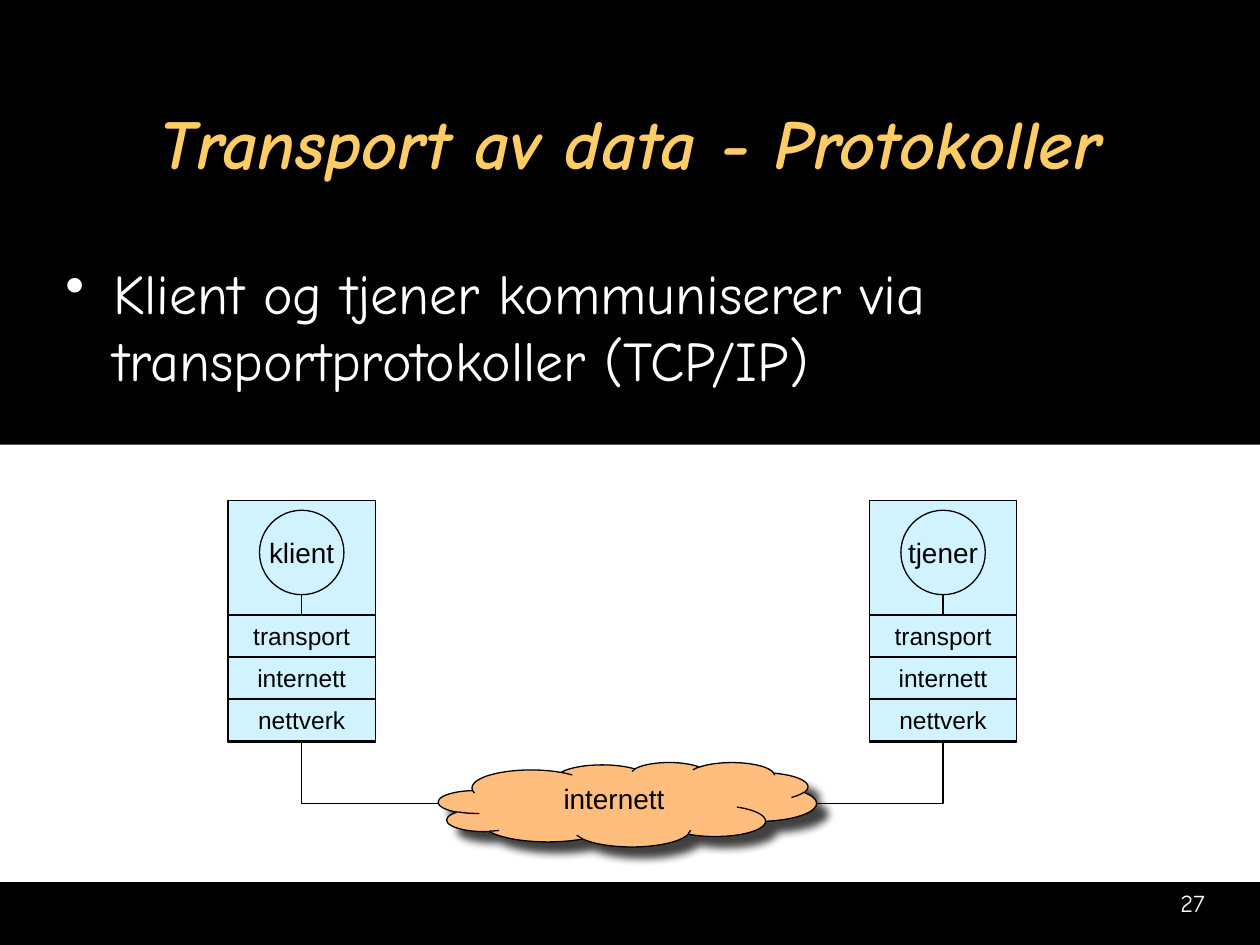
from lxml import etree
from pptx import Presentation
from pptx.dml.color import RGBColor
from pptx.enum.shapes import MSO_CONNECTOR, MSO_SHAPE
from pptx.enum.text import MSO_ANCHOR, PP_ALIGN
from pptx.oxml import parse_xml
from pptx.oxml.ns import nsdecls, qn
from pptx.util import Inches, Pt

BLACK = RGBColor(0x00, 0x00, 0x00)
WHITE = RGBColor(0xFF, 0xFF, 0xFF)
GOLD = RGBColor(0xFF, 0xCC, 0x66)
PALE_BLUE = RGBColor(0xD1, 0xF3, 0xFF)
ORANGE = RGBColor(0xFF, 0xBE, 0x7D)
RECTANGLE, OVAL, CLOUD = MSO_SHAPE.RECTANGLE, MSO_SHAPE.OVAL, MSO_SHAPE.CLOUD
STRAIGHT, ELBOW = MSO_CONNECTOR.STRAIGHT, MSO_CONNECTOR.ELBOW
TOP, MIDDLE = MSO_ANCHOR.TOP, MSO_ANCHOR.MIDDLE
LEFT, CENTER, RIGHT = PP_ALIGN.LEFT, PP_ALIGN.CENTER, PP_ALIGN.RIGHT
LINE_WIDTH = Pt(0.75)

deck = Presentation()
deck.slide_width, deck.slide_height = Inches(10), Inches(7.5)
page = deck.slides.add_slide(deck.slide_layouts[6])
page.background.fill.solid()
page.background.fill.fore_color.rgb = BLACK


def write(box, text, color, align, anchor, wrap, **formats):
    frame = box.text_frame
    frame.word_wrap = wrap
    frame.vertical_anchor = anchor
    para = frame.paragraphs[0]
    para.alignment = align
    span = para.add_run()
    span.text = text
    for name, value in formats.items():
        setattr(span.font, name, value)
    span.font.color.rgb = color
    return para


def add_filled(kind, left, top, width, height, color, outlined=True):
    shape = page.shapes.add_shape(
        kind, Inches(left), Inches(top), Inches(width), Inches(height))
    shape.shadow.inherit = False
    shape.fill.solid()
    shape.fill.fore_color.rgb = color
    if outlined:
        shape.line.color.rgb = BLACK
        shape.line.width = LINE_WIDTH
    else:
        shape.line.fill.background()
    return shape


number = page.shapes.add_textbox(Inches(7.58), Inches(7), Inches(2.08), Inches(0.33))
write(number, "27", WHITE, RIGHT, TOP, True, name="Comic Neue", size=Pt(14))

title = page.shapes.add_textbox(Inches(0.42), Inches(0.5), Inches(9.17), Inches(1.25))
write(title, "Transport av data - Protokoller", GOLD, CENTER, MIDDLE, True,
      name="Comic Neue", size=Pt(40), bold=True, italic=True)

body = page.shapes.add_textbox(Inches(0.42), Inches(2), Inches(9.17), Inches(1.33))
bullet = write(body, "Klient og tjener kommuniserer via transportprotokoller (TCP/IP)",
               WHITE, LEFT, TOP, True, name="Comic Neue", size=Pt(32))
bullet.space_before = Pt(6.4)
properties = bullet._p.get_or_add_pPr()
properties.set("marL", str(Inches(0.38)))
properties.set("indent", str(-Inches(0.38)))
etree.SubElement(properties, qn("a:buChar")).set("char", "•")

add_filled(RECTANGLE, 0, 3.53, 10, 3.47, WHITE, outlined=False)

MACHINE_WIDTH, CIRCLE_SIZE = 1.17, 0.67
LAYERS_TOP, LAYER_HEIGHT = 4.88, 1 / 3
NETWORK_Y, MACHINE_BOTTOM = 6.38, 5.88
links = []

for role, left, cloud_edge in (("klient", 1.81, 3.49), ("tjener", 6.9, 6.48)):
    middle = left + MACHINE_WIDTH / 2
    add_filled(RECTANGLE, left, 3.97, MACHINE_WIDTH, 1.92, PALE_BLUE)
    circle = add_filled(OVAL, middle - CIRCLE_SIZE / 2, 4.05,
                        CIRCLE_SIZE, CIRCLE_SIZE, PALE_BLUE)
    write(circle, role, BLACK, CENTER, MIDDLE, False, name="Arial", size=Pt(16))
    layers = []
    for index, layer in enumerate(("transport", "internett", "nettverk")):
        row = add_filled(RECTANGLE, left, LAYERS_TOP + index * LAYER_HEIGHT,
                         MACHINE_WIDTH, LAYER_HEIGHT, PALE_BLUE)
        write(row, layer, BLACK, CENTER, MIDDLE, False, name="Arial", size=Pt(14))
        layers.append(row)
    stem = page.shapes.add_connector(
        STRAIGHT, Inches(middle), Inches(4.72), Inches(middle), Inches(LAYERS_TOP))
    stem.end_connect(layers[0], 0)
    links.append(stem)
    cable = page.shapes.add_connector(
        ELBOW, Inches(cloud_edge), Inches(NETWORK_Y), Inches(middle), Inches(MACHINE_BOTTOM))
    cable._element.spPr.find(qn("a:prstGeom")).set("prst", "bentConnector2")
    links.append(cable)

for link in links:
    link.line.color.rgb = BLACK
    link.line.width = LINE_WIDTH
    etree.SubElement(link._element.spPr, qn("a:effectLst"))

cloud = add_filled(CLOUD, 3.48, 6.05, 3, 0.67, ORANGE)
write(cloud, "internett", BLACK, CENTER, TOP, True, name="Arial", size=Pt(16))
cloud._element.spPr.find(qn("a:effectLst")).append(parse_xml(
    f'<a:outerShdw {nsdecls("a")} blurRad="{Pt(5)}" dist="{Pt(8.5)}" dir="2700000" '
    'algn="ctr" rotWithShape="0"><a:srgbClr val="000000"><a:alpha val="75000"/>'
    '</a:srgbClr></a:outerShdw>'))

deck.save("out.pptx")
